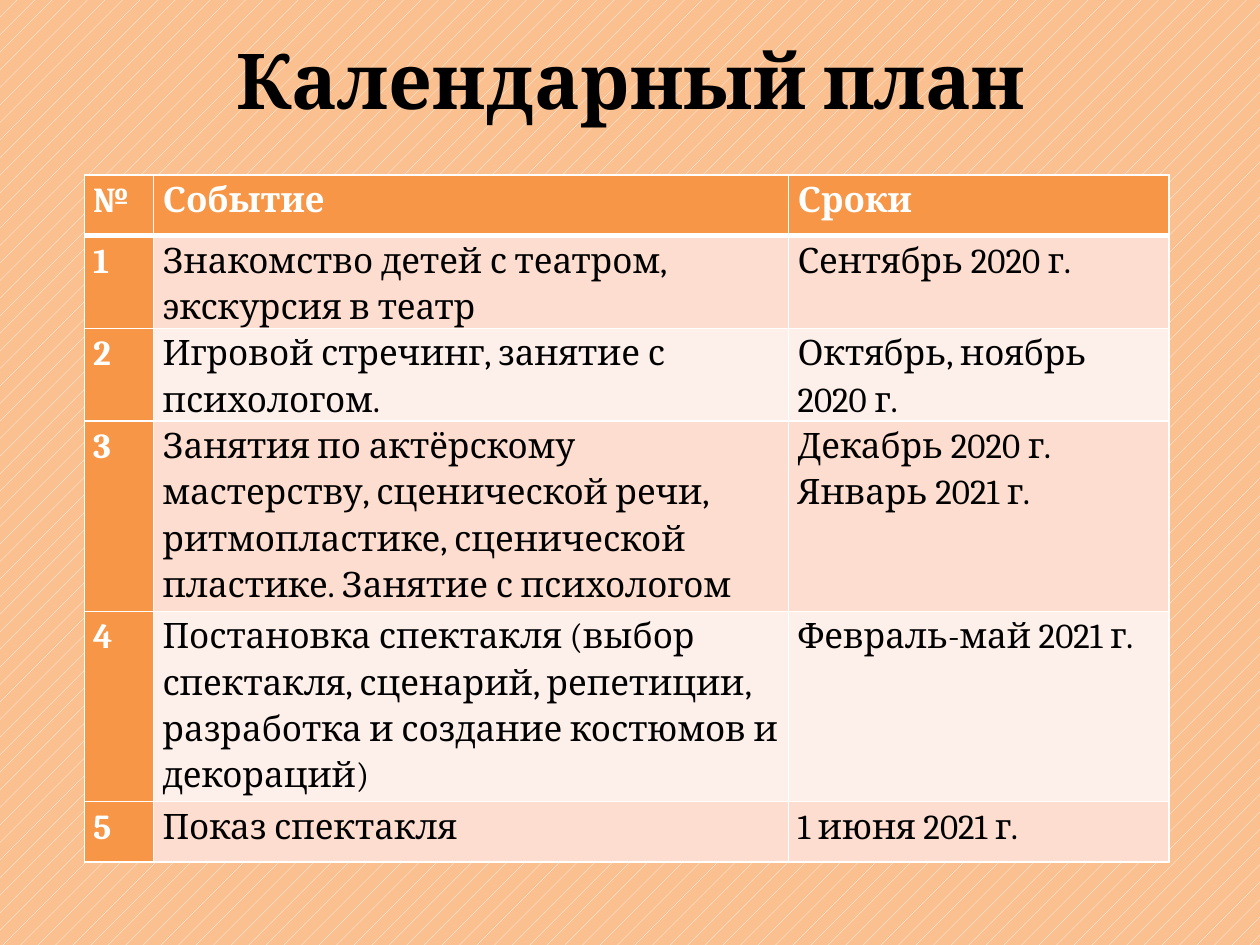
from dataclasses import dataclass

from lxml import etree
from pptx import Presentation
from pptx.dml.color import RGBColor
from pptx.enum.dml import MSO_PATTERN
from pptx.enum.text import MSO_ANCHOR, PP_ALIGN
from pptx.oxml.ns import qn
from pptx.util import Inches, Pt

DOTS = MSO_PATTERN.PERCENT_5
CENTER = PP_ALIGN.CENTER
MIDDLE = MSO_ANCHOR.MIDDLE
TITLE_ONLY = 5

HEADER = ["№", "Событие", "Сроки"]
EVENTS = [
    ("Знакомство детей с театром, экскурсия в театр", "Сентябрь 2020 г."),
    ("Игровой стречинг, занятие с психологом.", "Октябрь, ноябрь 2020 г."),
    ("Занятия по актёрскому мастерству, сценической речи, ритмопластике, "
     "сценической пластике. Занятие с психологом",
     "Декабрь 2020 г.\nЯнварь 2021 г."),
    ("Постановка спектакля (выбор спектакля, сценарий, репетиции, "
     "разработка и создание костюмов и декораций)", "Февраль-май 2021 г."),
    ("Показ спектакля", "1 июня 2021 г."),
]
COLUMN_WIDTHS = [0.55, 5.04, 3.02]
ROW_HEIGHTS = [0.48, 0.48, 0.48, 1.51, 1.51, 0.48]


@dataclass(frozen=True)
class Theme:
    font: str = "Cambria"
    title_size: int = 44
    table_size: int = 20
    ink: str = "000000"
    white: str = "FFFFFF"
    page: str = "FAC090"
    accent: str = "F79646"
    bands: tuple = ("FCDDCF", "FDEFE9")


def rgb(value):
    return RGBColor.from_string(value)


def set_all(target, values):
    for name, value in values.items():
        setattr(target, name, value)


class SlideBuilder:
    """Holds the theme and the slide being built."""

    def __init__(self, deck, theme):
        self.theme = theme
        self.page = deck.slides.add_slide(deck.slide_layouts[TITLE_ONLY])

    def background(self):
        fill = self.page.background.fill
        fill.patterned()
        fill.pattern = DOTS
        fill.fore_color.rgb = rgb(self.theme.white)
        fill.back_color.rgb = rgb(self.theme.page)

    def style_span(self, span, size, color, bold):
        set_all(span.font, {"name": self.theme.font, "size": Pt(size), "bold": bold})
        span.font.color.rgb = rgb(color)

    def title(self, text, left, top, width, height):
        box = self.page.shapes.title
        set_all(box, {"left": Inches(left), "top": Inches(top),
                      "width": Inches(width), "height": Inches(height)})
        box.text_frame.vertical_anchor = MIDDLE
        para = box.text_frame.paragraphs[0]
        para.alignment = CENTER
        span = para.add_run()
        span.text = text
        self.style_span(span, self.theme.title_size, self.theme.ink, True)

    def borders(self, cell, widths):
        """Draw white cell edges; widths maps L, R, T and B to points."""
        properties = cell._tc.get_or_add_tcPr()
        for side, width in widths.items():
            line = etree.SubElement(properties, qn(f"a:ln{side}"), w=str(Pt(width)))
            fill = etree.SubElement(line, qn("a:solidFill"))
            etree.SubElement(fill, qn("a:srgbClr"), val=self.theme.white)

    def cell(self, cell, text, row, column):
        theme = self.theme
        strong = row == 0 or column == 0
        self.borders(cell, {"L": 1, "R": 1, "T": 3 if row == 1 else 1,
                            "B": 3 if row == 0 else 1})
        cell.fill.solid()
        cell.fill.fore_color.rgb = rgb(theme.accent if strong
                                       else theme.bands[(row - 1) % 2])
        set_all(cell, {"margin_left": Inches(0.07), "margin_right": Inches(0.07),
                       "margin_top": 0, "margin_bottom": 0})
        cell.text = text
        for para in cell.text_frame.paragraphs:
            para.line_spacing = 1.15
            for span in para.runs:
                self.style_span(span, theme.table_size,
                                theme.white if strong else theme.ink, strong)

    def table(self, rows, left, top, height):
        table = self.page.shapes.add_table(
            len(rows), len(COLUMN_WIDTHS), Inches(left), Inches(top),
            Inches(sum(COLUMN_WIDTHS)), Inches(height)).table
        set_all(table, {"first_col": True, "horz_banding": True})
        for column, width in zip(table.columns, COLUMN_WIDTHS):
            column.width = Inches(width)
        for row, row_height in zip(table.rows, ROW_HEIGHTS):
            row.height = Inches(row_height)
        for row, texts in enumerate(rows):
            for column, text in enumerate(texts):
                self.cell(table.cell(row, column), text, row, column)


def main():
    deck = Presentation()
    set_all(deck, {"slide_width": Inches(10), "slide_height": Inches(7.5)})
    builder = SlideBuilder(deck, Theme())
    builder.background()
    builder.title("Календарный план", 0.51, 0, 9, 1.25)
    numbered = [(str(number), *event) for number, event in enumerate(EVENTS, 1)]
    builder.table([HEADER, *numbered], 0.67, 1.39, 5.57)
    deck.save("out.pptx")


if __name__ == "__main__":
    main()
